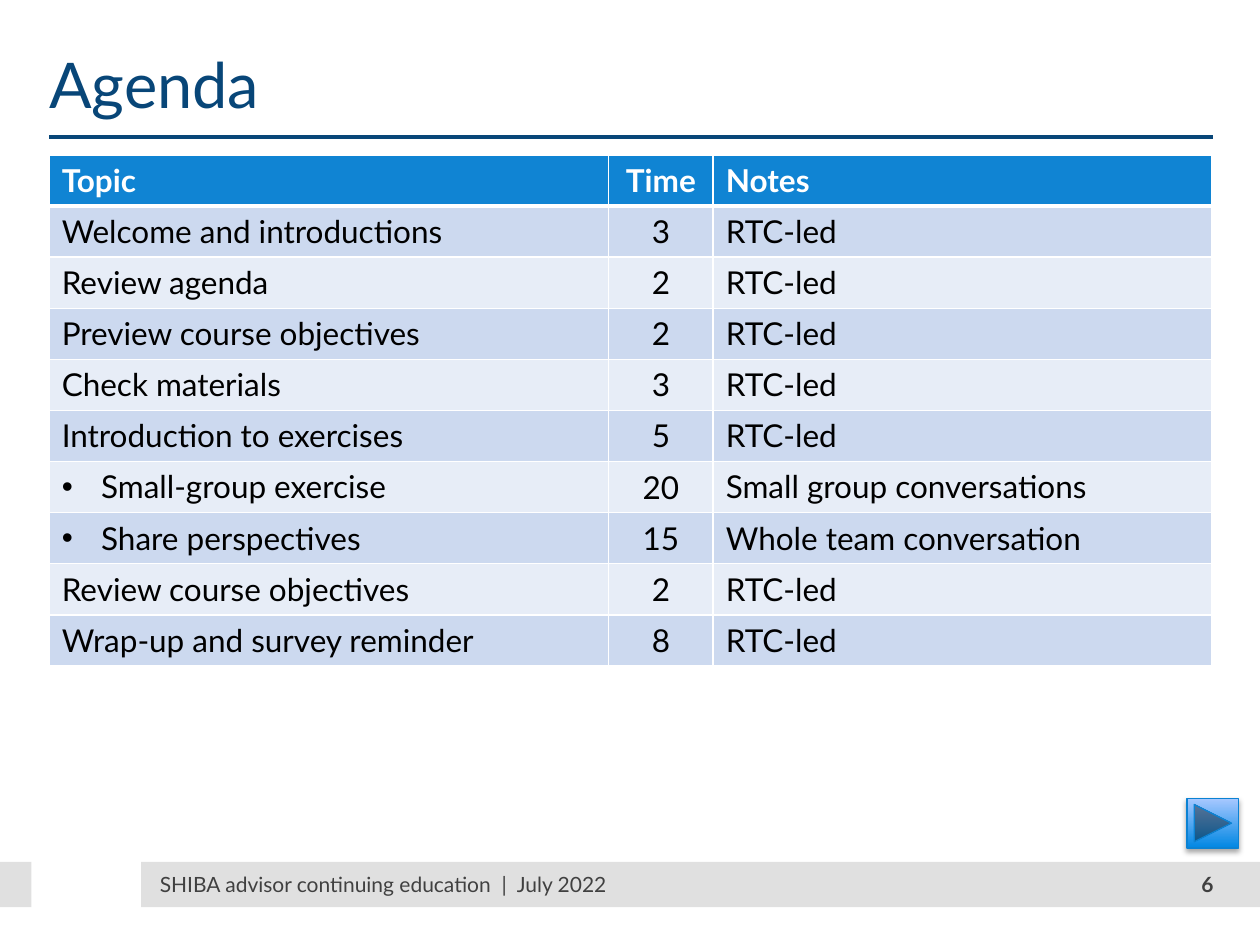
from lxml import etree
from pptx import Presentation
from pptx import util as u
from pptx.dml.color import RGBColor
from pptx.enum import shapes, text
from pptx.oxml import parse_xml
from pptx.oxml.ns import nsdecls, qn

COLORS = {
    "navy": "084678", "header": "1084D3", "band": "CCD9EF", "light": "E7EDF7",
    "bar": "E0E0E0", "footer": "404040", "white": "FFFFFF", "black": "000000",
    "button_line": "0B82D3", "button_low": "0087E3", "button_high": "A8C8FF",
}
LEFT, RIGHT, CENTER = text.PP_ALIGN.LEFT, text.PP_ALIGN.RIGHT, text.PP_ALIGN.CENTER
TOP, MIDDLE = text.MSO_ANCHOR.TOP, text.MSO_ANCHOR.MIDDLE
AGENDA = [
    ("Topic", "Time", "Notes"),
    ("Welcome and introductions", "3", "RTC-led"),
    ("Review agenda", "2", "RTC-led"),
    ("Preview course objectives", "2", "RTC-led"),
    ("Check materials", "3", "RTC-led"),
    ("Introduction to exercises", "5", "RTC-led"),
    ("Small-group exercise", "20", "Small group conversations"),
    ("Share perspectives", "15", "Whole team conversation"),
    ("Review course objectives", "2", "RTC-led"),
    ("Wrap-up and survey reminder", "8", "RTC-led"),
]
BULLET_ROWS = (6, 7)
FIRST_MIDDLE_ROW = 6


def rgb(name):
    return RGBColor.from_string(COLORS[name])


def write(tf, content, size=18, color="black", bold=False, align=LEFT, bullet=False):
    p = tf.paragraphs[0]
    p.alignment = align
    if bullet:
        pPr = p._p.get_or_add_pPr()
        pPr.set("marL", str(u.Pt(22.5)))
        pPr.set("indent", str(u.Pt(-22.5)))
        etree.SubElement(pPr, qn("a:buFont")).set("typeface", "Arial")
        etree.SubElement(pPr, qn("a:buChar")).set("char", "•")
    r = p.add_run()
    r.text = content
    r.font.name = "Lato"
    r.font.size = u.Pt(size)
    r.font.bold = bold
    r.font.color.rgb = rgb(color)


class Deck:
    def __init__(self, width, height):
        self.prs = Presentation()
        self.prs.slide_width, self.prs.slide_height = u.Pt(width), u.Pt(height)
        self.s = self.prs.slides.add_slide(self.prs.slide_layouts[6])

    def box(self, *at):
        return [u.Pt(v) for v in at]

    def label(self, at, content, anchor=MIDDLE, **fmt):
        tf = self.s.shapes.add_textbox(*self.box(*at)).text_frame
        tf.word_wrap = True
        tf.vertical_anchor = anchor
        tf.margin_left = tf.margin_right = tf.margin_top = tf.margin_bottom = 0
        write(tf, content, **fmt)

    def bar(self, at, color):
        sp = self.s.shapes.add_shape(shapes.MSO_SHAPE.RECTANGLE, *self.box(*at))
        sp.shadow.inherit = False
        sp.fill.solid()
        sp.fill.fore_color.rgb = rgb(color)
        sp.line.fill.background()

    def rule(self, ends, color, width):
        cx = self.s.shapes.add_connector(shapes.MSO_CONNECTOR.STRAIGHT, *self.box(*ends))
        cx.line.color.rgb = rgb(color)
        cx.line.width = u.Pt(width)
        etree.SubElement(cx._element.spPr, qn("a:effectLst"))

    def next_button(self, at):
        kind = shapes.MSO_SHAPE.ACTION_BUTTON_FORWARD_OR_NEXT
        sp = self.s.shapes.add_shape(kind, *self.box(*at))
        sp.fill.gradient()
        sp.fill.gradient_angle = 90
        for stop, color in zip(sp.fill.gradient_stops, ("button_low", "button_high")):
            stop.color.rgb = rgb(color)
        sp.line.color.rgb = rgb("button_line")
        sp.line.width = u.Pt(0.75)
        sp.shadow.inherit = False
        sp._element.spPr.find(qn("a:effectLst")).append(parse_xml(
            f'<a:outerShdw {nsdecls("a")} blurRad="{u.Pt(3.1)}" dist="{u.Pt(1.8)}" '
            f'dir="5400000" rotWithShape="0"><a:srgbClr val="{COLORS["black"]}">'
            '<a:alpha val="35000"/></a:srgbClr></a:outerShdw>'))

    def borders(self, cell, **widths):
        tcPr = cell._tc.get_or_add_tcPr()
        for i, side in enumerate("LRTB"):
            tcPr.insert(i, parse_xml(
                f'<a:ln{side} {nsdecls("a")} w="{u.Pt(widths.get(side, 1))}">'
                f'<a:solidFill><a:srgbClr val="{COLORS["white"]}"/></a:solidFill></a:ln{side}>'))

    def table(self, left, top, col_widths, row_height, rows):
        at = self.box(left, top, sum(col_widths), row_height * len(rows))
        tbl = self.s.shapes.add_table(len(rows), len(col_widths), *at).table
        tbl.horz_banding = False
        for col, width in zip(tbl.columns, col_widths):
            col.width = u.Pt(width)
        for i, values in enumerate(rows):
            tbl.rows[i].height = u.Pt(row_height)
            head = i == 0
            fill = "header" if head else "band" if i % 2 else "light"
            for j, value in enumerate(values):
                cell = tbl.cell(i, j)
                cell.fill.solid()
                cell.fill.fore_color.rgb = rgb(fill)
                cell.vertical_anchor = MIDDLE if j == 1 and i >= FIRST_MIDDLE_ROW else TOP
                self.borders(cell, B=3 if head else 1, T=3 if i == 1 else 1)
                write(cell.text_frame, value, bold=head,
                      color="white" if head else "black",
                      align=CENTER if j == 1 else LEFT,
                      bullet=j == 0 and i in BULLET_ROWS)


def main():
    deck = Deck(720, 540)
    for left, width in ((80.64, 639.36), (0, 18)):
        deck.bar((left, 492.5, width, 25.9), "bar")
    deck.rule((28.08, 78.3, 693.36, 78.3), "navy", 2)
    deck.label((28.08, 25.9, 655.9, 59.8), "Agenda", anchor=TOP, size=36, color="navy")
    deck.label((643, 497.5, 50.4, 15.8), "6", size=12, color="footer", bold=True, align=RIGHT)
    deck.next_button((678.3, 456.2, 29.5, 28.4))
    deck.table(28.08, 88.56, (319.7, 59.8, 285.1), 29.2, AGENDA)
    deck.label((91.4, 497.5, 360, 15.8), "SHIBA advisor continuing education  |  July 2022",
               size=12, color="footer")
    deck.prs.save("out.pptx")


if __name__ == "__main__":
    main()
